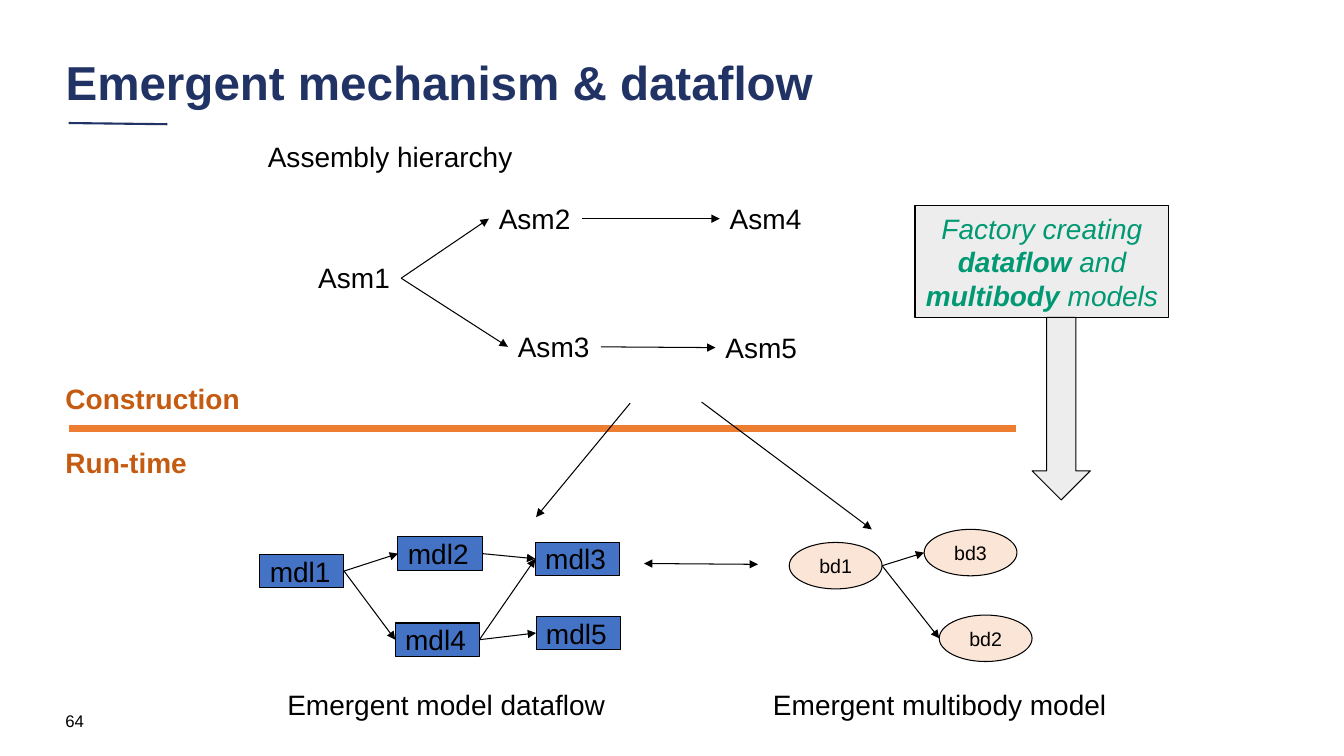
from lxml.etree import SubElement
from pptx import Presentation
from pptx.dml.color import RGBColor
from pptx.enum.shapes import MSO_CONNECTOR, MSO_SHAPE
from pptx.enum.text import MSO_ANCHOR, MSO_AUTO_SIZE, PP_ALIGN
from pptx.oxml.ns import qn
from pptx.util import Cm, Pt

BLACK, NAVY, ORANGE, RUST = "000000", "213265", "ED7D31", "C55A11"
BLUE, PEACH, GREY, GREEN = "4472C4", "FBE5D6", "EDEDED", "009973"
LEFT_MARGIN = 1.4

ASSEMBLIES = {
    "Asm1": (7.77, 6.45), "Asm2": (12.32, 4.95), "Asm3": (12.8, 8.18),
    "Asm4": (18.14, 4.95), "Asm5": (18.03, 8.2),
}
MODELS = {
    "mdl1": (6.55, 13.97), "mdl2": (10.03, 13.53), "mdl3": (13.49, 13.66),
    "mdl4": (9.96, 15.7), "mdl5": (13.51, 15.53),
}
BODIES = {"bd1": (19.89, 13.67), "bd2": (23.67, 15.5), "bd3": (23.29, 13.34)}
LINKS = [
    ("Asm1", "Asm2"), ("Asm1", "Asm3"), ("Asm2", "Asm4"), ("Asm3", "Asm5"),
    ("mdl1", "mdl2"), ("mdl1", "mdl4"), ("mdl4", "mdl3"), ("mdl4", "mdl5"),
    ("mdl2", "mdl3"), ("bd1", "bd3"), ("bd1", "bd2"),
]


def rgb(color):
    return RGBColor.from_string(color)


def add_run(p, text, size=20, color=BLACK, bold=False, italic=False):
    r = p.add_run()
    r.text = text
    r.font.name = "Arial"
    r.font.size = Pt(size)
    r.font.bold = bold
    r.font.italic = italic
    r.font.color.rgb = rgb(color)


def add_title(s, text):
    title = s.shapes.title
    title.left, title.top = Cm(LEFT_MARGIN), Cm(1.17)
    title.width, title.height = Cm(28.24), Cm(1.93)
    tf = title.text_frame
    tf.auto_size = MSO_AUTO_SIZE.NONE
    tf.vertical_anchor = MSO_ANCHOR.MIDDLE
    p = tf.paragraphs[0]
    p.alignment = PP_ALIGN.LEFT
    p.line_spacing = 0.9
    add_run(p, text, 34, NAVY, bold=True)


def add_label(s, text, x, y, w, h=1.12, wrap=False, anchor=MSO_ANCHOR.TOP, **font):
    sp = s.shapes.add_textbox(Cm(x), Cm(y), Cm(w), Cm(h))
    tf = sp.text_frame
    tf.word_wrap = wrap
    tf.vertical_anchor = anchor
    add_run(tf.paragraphs[0], text, **font)
    return sp


def add_box(s, kind, x, y, w, h, fill, align=PP_ALIGN.CENTER, wrap=False):
    sp = s.shapes.add_shape(kind, Cm(x), Cm(y), Cm(w), Cm(h))
    sp.shadow.inherit = False
    sp.fill.solid()
    sp.fill.fore_color.rgb = rgb(fill)
    sp.line.color.rgb = rgb(BLACK)
    sp.line.width = Pt(0.75)
    tf = sp.text_frame
    tf.word_wrap = wrap
    tf.vertical_anchor = MSO_ANCHOR.MIDDLE
    tf.paragraphs[0].alignment = align
    return sp


def add_line(s, x1, y1, x2, y2, color=BLACK, width=0.75, ends=()):
    """Draw a straight line; ends lists headEnd and tailEnd where arrowheads go."""
    line = s.shapes.add_connector(MSO_CONNECTOR.STRAIGHT, x1, y1, x2, y2)
    line.line.color.rgb = rgb(color)
    line.line.width = Pt(width)
    for end in ends:
        SubElement(line.line._get_or_add_ln(), qn(f"a:{end}"), type="triangle")
    SubElement(line._element.spPr, qn("a:effectLst"))
    return line


def link(s, a, b):
    """Glue an arrow from the right side of a to the left side of b."""
    line = add_line(s, a.left + a.width, a.top + a.height // 2,
                    b.left, b.top + b.height // 2, ends=["tailEnd"])
    glue = line._element.find(f"{qn('p:nvCxnSpPr')}/{qn('p:cNvCxnSpPr')}")
    for tag, sp, rect_site, ellipse_site in (("stCxn", a, 3, 6), ("endCxn", b, 1, 2)):
        site = ellipse_site if sp.text_frame.text.startswith("bd") else rect_site
        SubElement(glue, qn(f"a:{tag}"), id=str(sp.shape_id), idx=str(site))


def add_graphs(s):
    nodes = {}
    for name, (x, y) in ASSEMBLIES.items():
        nodes[name] = add_label(s, name, x, y, 2.34)
    for name, (x, y) in MODELS.items():
        nodes[name] = add_box(s, MSO_SHAPE.RECTANGLE, x, y, 2.12, 0.84, BLUE, PP_ALIGN.LEFT)
        add_run(nodes[name].text_frame.paragraphs[0], name)
    for name, (x, y) in BODIES.items():
        nodes[name] = add_box(s, MSO_SHAPE.OVAL, x, y, 2.34, 1.17, PEACH)
        add_run(nodes[name].text_frame.paragraphs[0], name, 14)
    for start, end in LINKS:
        link(s, nodes[start], nodes[end])


def add_factory(s):
    sp = add_box(s, MSO_SHAPE.RECTANGLE, 23.06, 5.18, 6.4, 2.82, GREY, wrap=True)
    p = sp.text_frame.paragraphs[0]
    for text, bold in (("Factory creating ", False), ("dataflow", True), (" and ", False),
                       ("multibody", True), (" models", False)):
        add_run(p, text, color=GREEN, bold=bold, italic=True)
    add_box(s, MSO_SHAPE.DOWN_ARROW, 26.01, 8, 1.47, 4.6, GREY)


def main():
    prs = Presentation()
    prs.slide_width, prs.slide_height = Cm(33.87), Cm(19.05)
    s = prs.slides.add_slide(prs.slide_layouts[5])

    add_title(s, "Emergent mechanism & dataflow")
    add_line(s, Cm(1.73), Cm(3.1), Cm(4.22), Cm(3.13), NAVY, 1.5)
    add_label(s, "64", LEFT_MARGIN, 17.65, 7.62, 1.02, wrap=True,
              anchor=MSO_ANCHOR.MIDDLE, size=12)

    add_line(s, Cm(1.73), Cm(10.8), Cm(25.6), Cm(10.8), ORANGE, 4.5)
    add_label(s, "Construction", LEFT_MARGIN, 9.5, 4.95, color=RUST, bold=True)
    add_label(s, "Run-time", LEFT_MARGIN, 11.1, 3.61, color=RUST, bold=True)

    add_label(s, "Assembly hierarchy", 6.5, 3.4, 6.73)
    add_graphs(s)
    add_line(s, Cm(15.88), Cm(10.16), Cm(13.51), Cm(13.03), ends=["tailEnd"])
    add_line(s, Cm(17.68), Cm(10.13), Cm(21.97), Cm(13.34), ends=["tailEnd"])
    add_line(s, Cm(16.23), Cm(14.2), Cm(19.1), Cm(14.22), ends=["headEnd", "tailEnd"])
    add_label(s, "Emergent model dataflow", 6.99, 17.2, 9.25, 1.27, wrap=True)
    add_label(s, "Emergent multibody model", 19.23, 17.2, 9.25, 1.27, wrap=True)
    add_factory(s)

    prs.save("out.pptx")


if __name__ == "__main__":
    main()
